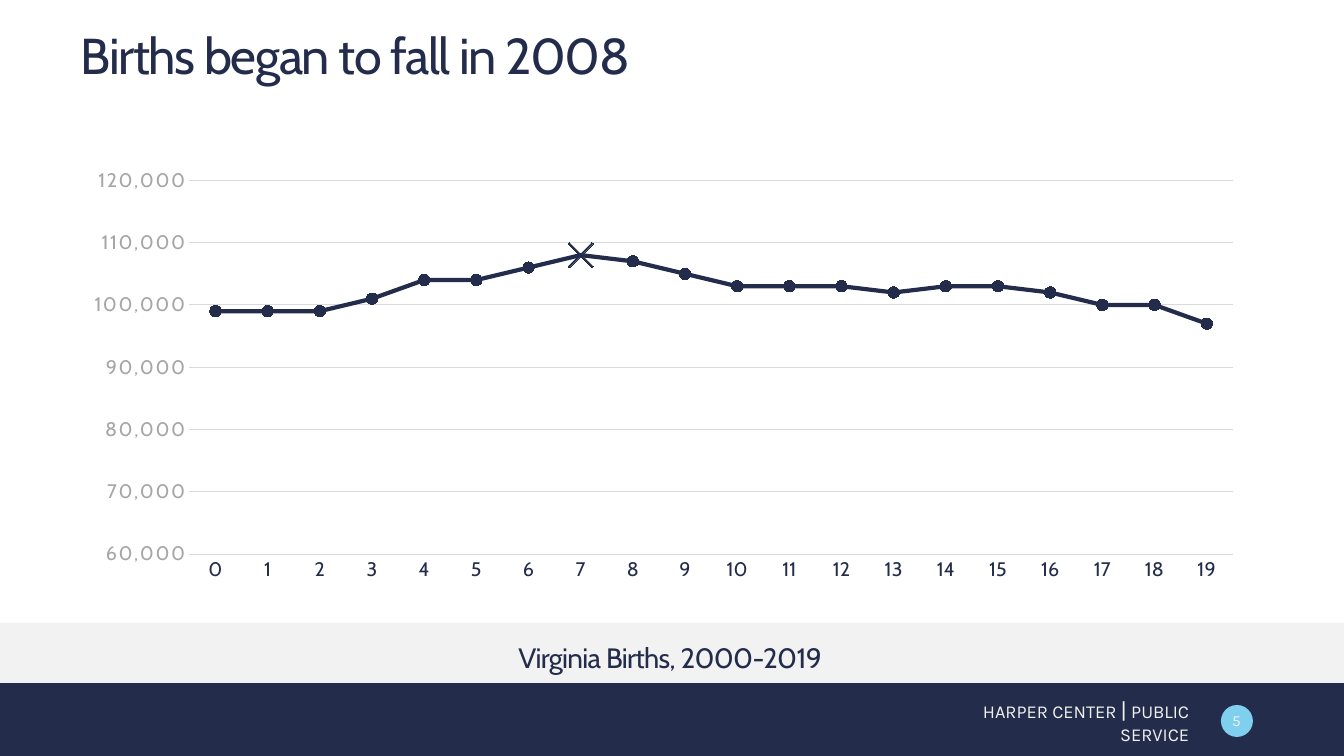
from dataclasses import dataclass

from lxml.etree import SubElement
from pptx import Presentation
from pptx.chart.data import CategoryChartData
from pptx.dml.color import RGBColor
from pptx.enum.chart import XL_CHART_TYPE as ChartType, XL_MARKER_STYLE as Marker, XL_TICK_MARK as Tick
from pptx.enum.shapes import MSO_SHAPE as Preset
from pptx.enum.text import MSO_ANCHOR as Anchor, PP_ALIGN as Align
from pptx.oxml.ns import qn
from pptx.slide import Slide
from pptx.util import Emu, Pt

SLIDE_W, SLIDE_H = 1344, 756
EMU_PER_PX = 12192000 / SLIDE_W


@dataclass(frozen=True)
class Theme:
    navy: RGBColor = RGBColor(0x23, 0x2D, 0x4B)
    sky: RGBColor = RGBColor(0x7F, 0xCF, 0xEF)
    band: RGBColor = RGBColor(0xF2, 0xF2, 0xF2)
    pale: RGBColor = RGBColor(0xF1, 0xF1, 0xEF)
    grid: RGBColor = RGBColor(0xD9, 0xD9, 0xD9)
    muted: RGBColor = RGBColor(0xA6, 0xA6, 0xA6)
    heading: str = "Cabin"
    footer: str = "Karla"
    title_size: int = 36
    caption_size: int = 20
    divider_size: int = 16
    axis_size: int = 14
    footer_size: int = 13
    number_size: int = 11


THEME = Theme()


@dataclass(frozen=True)
class Box:
    left: int
    top: int
    width: int
    height: int

    def emu(self) -> tuple[Emu, ...]:
        return tuple(px(n) for n in (self.left, self.top, self.width, self.height))


@dataclass(frozen=True)
class Panel:
    box: Box
    preset: Preset
    color: RGBColor


@dataclass(frozen=True)
class Label:
    box: Box
    runs: tuple[tuple[str, int], ...]
    font: str
    color: RGBColor
    align: Align = Align.LEFT
    anchor: Anchor = Anchor.MIDDLE
    bottom_inset: int = 5
    line_spacing: float = 1.0
    space_before: int = 0
    tracking: int = 0


PANELS = (
    Panel(Box(0, 683, SLIDE_W, 73), Preset.RECTANGLE, THEME.navy),
    Panel(Box(1221, 705, 32, 32), Preset.OVAL, THEME.sky),
    Panel(Box(0, 623, SLIDE_W, 60), Preset.RECTANGLE, THEME.band),
)
LABELS = (
    Label(Box(71, 24, 1182, 60), (("Births began to fall in 2008", THEME.title_size),),
          THEME.heading, THEME.navy, anchor=Anchor.BOTTOM, bottom_inset=0,
          line_spacing=0.8, tracking=-100),
    Label(Box(927, 701, 272, 40),
          (("HARPER CENTER ", THEME.footer_size), ("|", THEME.divider_size),
           (" PUBLIC SERVICE", THEME.footer_size)),
          THEME.footer, THEME.pale, Align.RIGHT),
    Label(Box(1214, 703, 45, 35), (("5", THEME.number_size),),
          THEME.footer, THEME.pale, Align.CENTER),
    Label(Box(81, 639, 1178, 36), (("Virginia Births, 2000-2019", THEME.caption_size),),
          THEME.heading, THEME.navy, Align.CENTER, Anchor.TOP,
          line_spacing=0.9, space_before=10, tracking=-50),
)

CHART_BOX = Box(81, 156, 1179, 444)
PLOT_AREA = {"x": 0.09, "y": 0.055, "w": 0.885, "h": 0.842} | {"x": 0.092}
BIRTHS_THOUSANDS = (99, 99, 99, 101, 104, 104, 106, 108, 107, 105,
                    103, 103, 103, 102, 103, 103, 102, 100, 100, 97)
PEAK_YEAR = 7


def px(length: int) -> Emu:
    return Emu(round(length * EMU_PER_PX))


def apply(target: object, formats: dict[str, object]) -> None:
    """Set each named attribute on the target."""
    for name, value in formats.items():
        setattr(target, name, value)


def add_panel(slide: Slide, panel: Panel) -> None:
    shape = slide.shapes.add_shape(panel.preset, *panel.box.emu())
    shape.shadow.inherit = False
    shape.fill.solid()
    shape.fill.fore_color.rgb = panel.color
    shape.line.fill.background()


def add_label(slide: Slide, label: Label) -> None:
    frame = slide.shapes.add_textbox(*label.box.emu()).text_frame
    apply(frame, {"word_wrap": True, "vertical_anchor": label.anchor,
                  "margin_bottom": px(label.bottom_inset)})
    paragraph = frame.paragraphs[0]
    apply(paragraph, {"alignment": label.align, "line_spacing": label.line_spacing,
                      "space_before": Pt(label.space_before)})
    for text, size in label.runs:
        run = paragraph.add_run()
        run.text = text
        apply(run.font, {"name": label.font, "size": Pt(size)})
        run.font.color.rgb = label.color
        if label.tracking:
            run.font._element.set("spc", str(label.tracking))


def style_axis(axis: object, color: RGBColor, number_format: str) -> None:
    apply(axis, {"major_tick_mark": Tick.NONE, "minor_tick_mark": Tick.NONE})
    labels = axis.tick_labels
    apply(labels, {"number_format": number_format, "number_format_is_linked": False})
    apply(labels.font, {"name": THEME.heading, "size": Pt(THEME.axis_size)})
    labels.font.color.rgb = color


def style_line(line: object, color: RGBColor, width: float) -> None:
    line.color.rgb = color
    line.width = Pt(width)


def style_marker(marker: object, style: Marker, size: int) -> None:
    apply(marker, {"style": style, "size": size})
    marker.format.fill.solid()
    marker.format.fill.fore_color.rgb = THEME.navy
    marker.format.line.color.rgb = THEME.navy


def place_plot(chart: object) -> None:
    """Fix the inner plot area as fractions of the chart."""
    plot_area = chart._chartSpace.find(f".//{qn('c:plotArea')}")
    for layout in plot_area.findall(qn("c:layout")):
        plot_area.remove(layout)
    layout = SubElement(plot_area, qn("c:layout"))
    plot_area.insert(0, layout)
    manual = SubElement(layout, qn("c:manualLayout"))
    settings = {"layoutTarget": "inner", "xMode": "edge", "yMode": "edge"} | PLOT_AREA
    for tag, value in settings.items():
        SubElement(manual, qn(f"c:{tag}")).set("val", str(value))


def add_births_chart(slide: Slide) -> None:
    births = CategoryChartData(number_format="#,##0")
    births.categories = [str(year) for year in range(len(BIRTHS_THOUSANDS))]
    births.add_series("Series 1", [count * 1000 for count in BIRTHS_THOUSANDS])
    chart = slide.shapes.add_chart(ChartType.LINE_MARKERS, *CHART_BOX.emu(), births).chart
    apply(chart, {"has_legend": False, "has_title": False})
    apply(chart.font, {"name": THEME.heading, "size": Pt(THEME.axis_size)})

    style_axis(chart.category_axis, THEME.navy, r"\'00")
    style_line(chart.category_axis.format.line, THEME.grid, 0.75)
    counts = chart.value_axis
    style_axis(counts, THEME.muted, "#,##0")
    apply(counts, {"minimum_scale": 60000, "maximum_scale": 120000, "major_unit": 10000})
    counts.format.line.fill.background()
    style_line(counts.major_gridlines.format.line, THEME.grid, 0.75)
    counts._element.find(f".//{qn('a:defRPr')}").set("spc", "100")

    plot = chart.plots[0]
    plot.vary_by_categories = False
    series = plot.series[0]
    series.smooth = False
    style_line(series.format.line, THEME.navy, 3)
    style_marker(series.marker, Marker.CIRCLE, 8)
    peak = series.points[PEAK_YEAR]
    style_marker(peak.marker, Marker.X, 18)
    style_line(peak.format.line, THEME.navy, 3)
    place_plot(chart)


def main() -> None:
    deck = Presentation()
    apply(deck, {"slide_width": px(SLIDE_W), "slide_height": px(SLIDE_H)})
    slide = deck.slides.add_slide(deck.slide_layouts[6])
    for panel in PANELS:
        add_panel(slide, panel)
    for label in LABELS:
        add_label(slide, label)
    add_births_chart(slide)
    deck.save("out.pptx")


if __name__ == "__main__":
    main()
